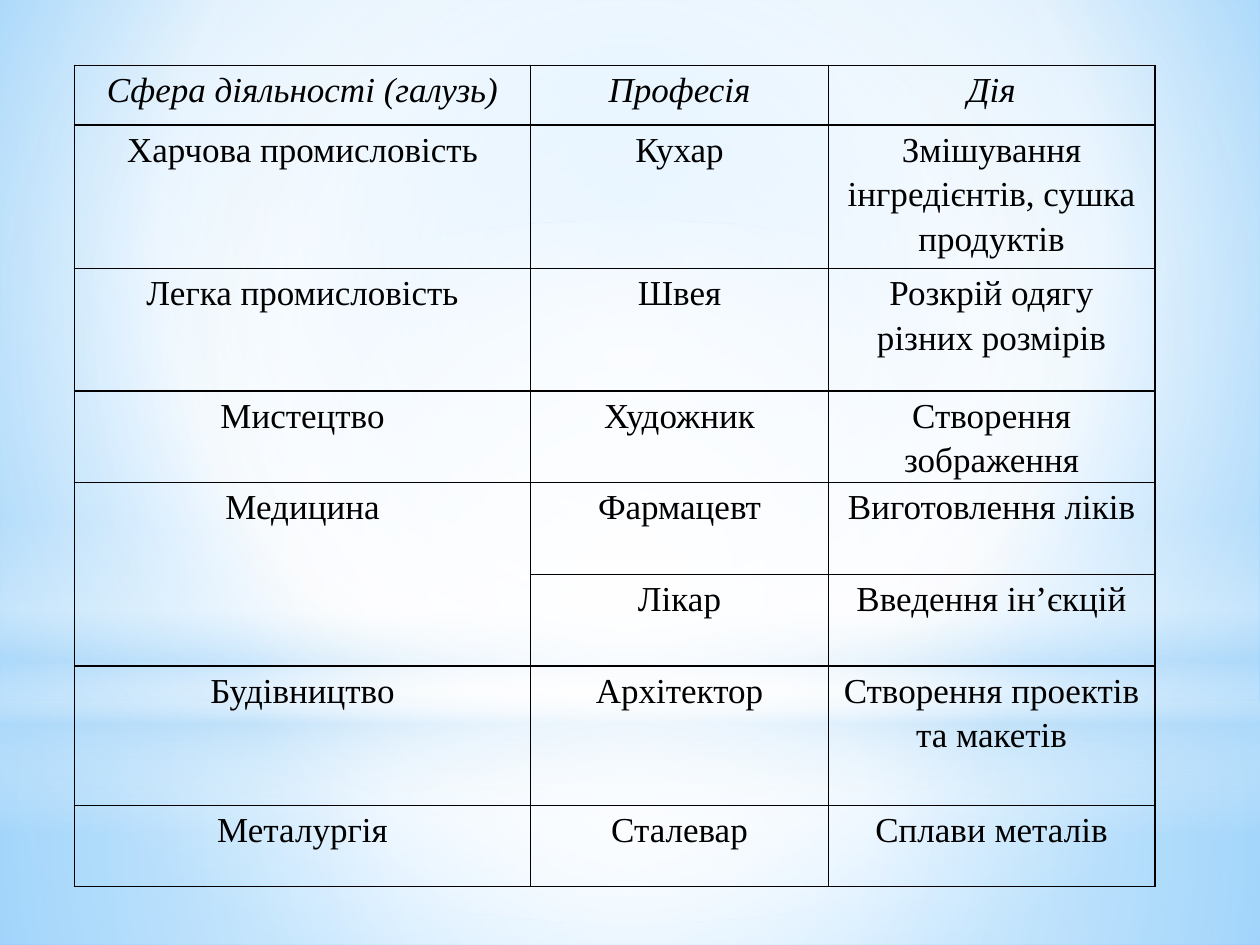
from dataclasses import dataclass
from typing import Optional

from lxml import etree
from pptx import Presentation
from pptx import util as u
from pptx.dml.color import RGBColor
from pptx.enum import shapes, text
from pptx.oxml.ns import qn

COLORS = {"white": "FFFFFF", "haze": "B4DCFA", "sky": "9ED5FF", "azure": "5BB9FF", "ink": "000000"}
FONT = "Times New Roman"
WIDTH, HEIGHT = 25.4, 19.05
COLUMNS = [9.2, 6, 6.58]
CENTER = (50, 50, 50, 50)


@dataclass
class Stop:
    pos: int
    color: str
    alpha: int = 100


@dataclass
class Gradient:
    stops: list[Stop]
    focus: Optional[tuple[int, int, int, int]] = None
    angle: int = 0


@dataclass
class Glow:
    kind: shapes.MSO_SHAPE
    top: float
    height: float
    gradient: Gradient


@dataclass
class Row:
    height: float
    cells: tuple[str, str, str]
    italic: bool = False
    joins_above: bool = False


SKY = Gradient([Stop(0, "sky"), Stop(60, "white"), Stop(100, "azure")], (20, 10, 20, 60))
GLOWS = [
    Glow(shapes.MSO_SHAPE.RECTANGLE, 14.17, 4.88, Gradient(
        [Stop(0, "white", 91), Stop(37, "white", 76), Stop(100, "haze", 79)], CENTER)),
    Glow(shapes.MSO_SHAPE.RECTANGLE, 0, 14.17, Gradient(
        [Stop(0, "white", 89), Stop(48, "white", 62), Stop(100, "haze", 79)], CENTER)),
    Glow(shapes.MSO_SHAPE.RECTANGLE, 10.46, 6.35, Gradient(
        [Stop(0, "white", 0), Stop(29, "white", 30), Stop(45, "haze", 40),
         Stop(55, "white", 26), Stop(65, "haze", 60), Stop(100, "white", 0)], angle=90)),
    Glow(shapes.MSO_SHAPE.OVAL, 4.45, 14.17, Gradient(
        [Stop(0, "white"), Stop(56, "white", 0)], CENTER)),
]
ROWS = [
    Row(1.2, ("Сфера діяльності (галузь)", "Професія", "Дія"), italic=True),
    Row(2.89, ("Харчова промисловість", "Кухар", "Змішування інгредієнтів, сушка продуктів")),
    Row(2.47, ("Легка промисловість", "Швея", "Розкрій одягу різних розмірів")),
    Row(1.85, ("Мистецтво", "Художник", "Створення зображення")),
    Row(1.85, ("Медицина", "Фармацевт", "Виготовлення ліків")),
    Row(1.85, ("", "Лікар", "Введення ін’єкцій"), joins_above=True),
    Row(2.81, ("Будівництво", "Архітектор", "Створення проектів та макетів")),
    Row(1.63, ("Металургія", "Сталевар", "Сплави металів")),
]


def add(parent, tag: str, **attrs):
    return etree.SubElement(parent, qn(tag), {k: str(v) for k, v in attrs.items()})


def set_gradient(fill, props, gradient: Gradient) -> None:
    fill.solid()
    grad = etree.Element(qn("a:gradFill"), rotWithShape="1")
    stops = add(grad, "a:gsLst")
    for stop in gradient.stops:
        clr = add(add(stops, "a:gs", pos=stop.pos * 1000), "a:srgbClr", val=COLORS[stop.color])
        if stop.alpha < 100:
            add(clr, "a:alpha", val=stop.alpha * 1000)
    if gradient.focus:
        sides = {side: v * 1000 for side, v in zip("ltrb", gradient.focus)}
        add(add(grad, "a:path", path="circle"), "a:fillToRect", **sides)
    else:
        add(grad, "a:lin", ang=gradient.angle * 60000, scaled=0)
    props.replace(props.find(qn("a:solidFill")), grad)


def add_glow(s, glow: Glow) -> None:
    sp = s.shapes.add_shape(glow.kind, 0, u.Cm(glow.top), u.Cm(WIDTH), u.Cm(glow.height))
    sp.shadow.inherit = False
    sp.line.fill.background()
    set_gradient(sp.fill, sp._element.spPr, glow.gradient)


def format_cell(cell, label: str, italic: bool) -> None:
    tcPr = cell._tc.get_or_add_tcPr()
    for side in "LRTB":
        ln = add(tcPr, f"a:ln{side}", w=u.Pt(1))
        add(add(ln, "a:solidFill"), "a:srgbClr", val=COLORS["ink"])
    cell.fill.background()
    cell.margin_left = cell.margin_right = u.Cm(0.18)
    cell.margin_top = cell.margin_bottom = 0
    if not label:
        return
    cell.text = label
    p = cell.text_frame.paragraphs[0]
    p.alignment = text.PP_ALIGN.CENTER
    p.line_spacing = 1.15
    p.font.name = FONT
    p.font.size = u.Pt(20)
    p.font.italic = italic
    p.font.color.rgb = RGBColor.from_string(COLORS["ink"])


def add_professions(s) -> None:
    total = sum(row.height for row in ROWS)
    table = s.shapes.add_table(len(ROWS), len(COLUMNS), u.Cm(1.5), u.Cm(1.32),
                               u.Cm(sum(COLUMNS)), u.Cm(total)).table
    table.first_row = table.horz_banding = False
    for column, width in zip(table.columns, COLUMNS):
        column.width = u.Cm(width)
    for i, row in enumerate(ROWS):
        table.rows[i].height = u.Cm(row.height)
        for j, label in enumerate(row.cells):
            format_cell(table.cell(i, j), label, row.italic)
        if row.joins_above:
            table.cell(i - 1, 0).merge(table.cell(i, 0))


def main() -> None:
    prs = Presentation()
    prs.slide_width, prs.slide_height = u.Cm(WIDTH), u.Cm(HEIGHT)
    s = prs.slides.add_slide(prs.slide_layouts[6])
    fill = s.background.fill
    fill.solid()
    set_gradient(fill, s._element.find(f".//{qn('p:bgPr')}"), SKY)
    for glow in GLOWS:
        add_glow(s, glow)
    add_professions(s)
    prs.save("out.pptx")


if __name__ == "__main__":
    main()
